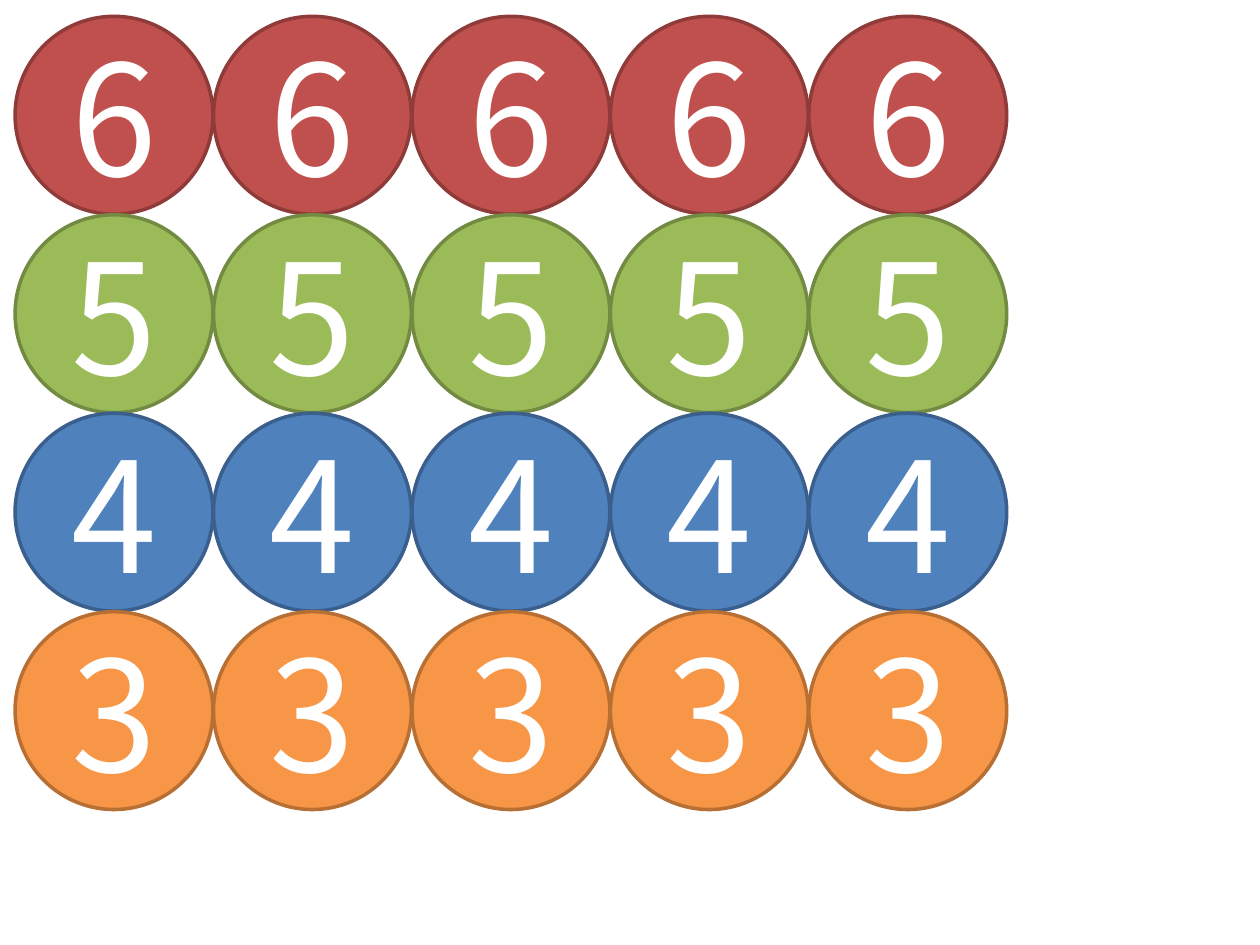
from pptx import Presentation
from pptx.dml.color import RGBColor
from pptx.enum.shapes import MSO_SHAPE as Shape
from pptx.enum.text import MSO_ANCHOR as Anchor, PP_ALIGN as Align
from pptx.util import Inches, Pt

COLORS = {
    "red": "C0504D", "dark red": "8E3B39",
    "green": "9BBB59", "dark green": "738A42",
    "blue": "4F81BD", "dark blue": "3A5F8C",
    "orange": "F79646", "dark orange": "B76F34",
    "white": "FFFFFF",
}
ROWS = [("6 ", "red"), ("5", "green"), ("4", "blue"), ("3", "orange")]
COLUMNS = 5
LEFT, TOP, DIAMETER = 0.12, 0.13, 1.57
PITCH = 6.3 / (COLUMNS - 1)


def color(name):
    return RGBColor.from_string(COLORS[name])


def add_counter(page, column, row, digit, hue):
    """Draw one numbered circle at its place in the grid."""
    circle = page.shapes.add_shape(
        Shape.OVAL, Inches(LEFT + column * PITCH), Inches(TOP + row * PITCH),
        Inches(DIAMETER), Inches(DIAMETER))
    circle.shadow.inherit = False
    circle.fill.solid()
    circle.fill.fore_color.rgb = color(hue)
    circle.line.color.rgb = color(f"dark {hue}")
    circle.line.width = Pt(2)
    frame = circle.text_frame
    frame.word_wrap = True
    frame.vertical_anchor = Anchor.MIDDLE
    para = frame.paragraphs[0]
    para.alignment = Align.CENTER
    span = para.add_run()
    span.text = digit
    for name, value in {"name": "Noto Sans CJK KR", "size": Pt(88)}.items():
        setattr(span.font, name, value)
    span.font.color.rgb = color("white")


def main():
    deck = Presentation()
    deck.slide_width, deck.slide_height = Inches(10), Inches(7.5)
    page = deck.slides.add_slide(deck.slide_layouts[6])
    for column in range(COLUMNS):
        for row, (digit, hue) in enumerate(ROWS):
            add_counter(page, column, row, digit, hue)
    deck.save("out.pptx")


if __name__ == "__main__":
    main()
